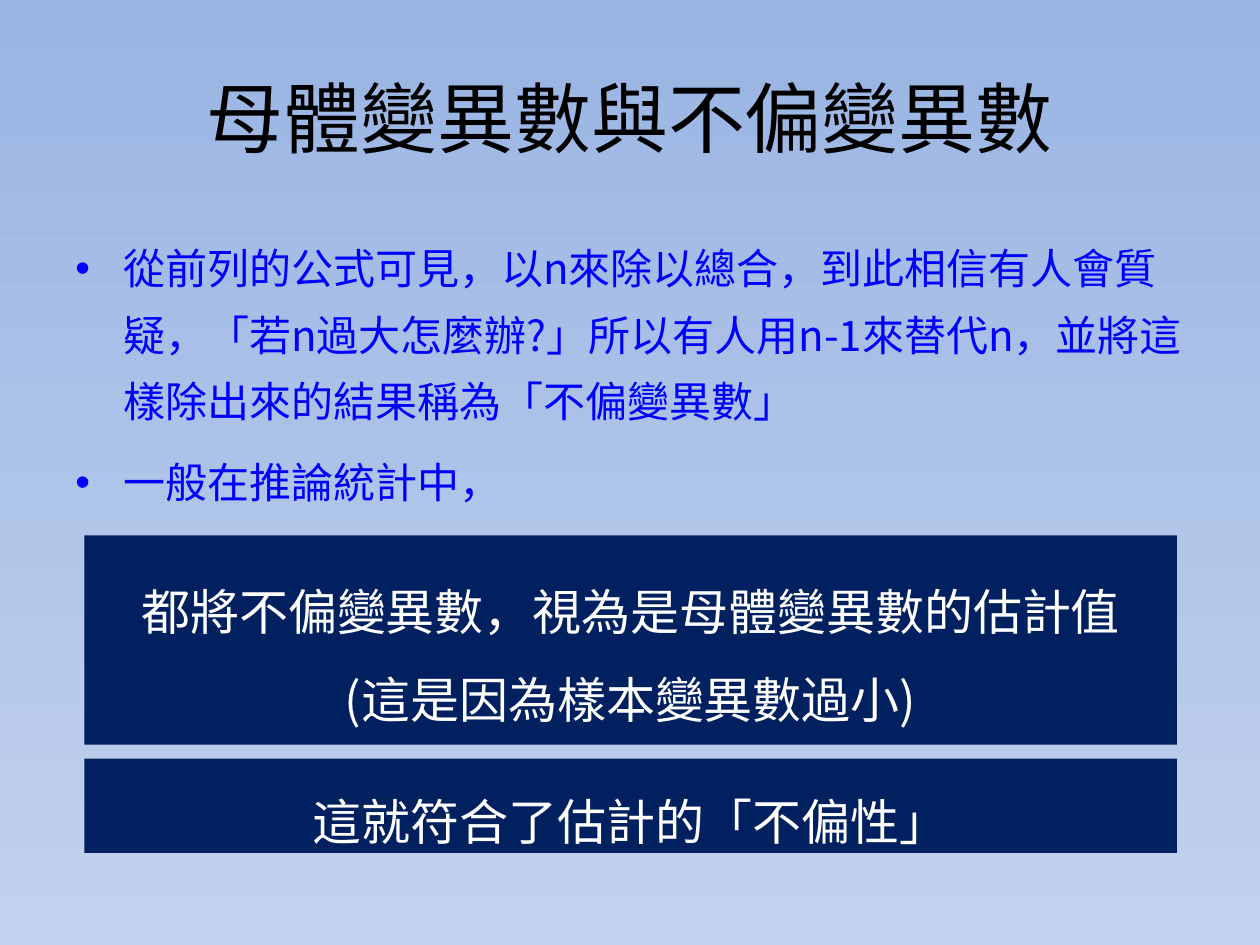
from lxml import etree
from pptx import Presentation
from pptx.dml.color import RGBColor
from pptx.enum import shapes, text
from pptx.oxml import ns
from pptx.util import Inches, Pt

COLORS = {
    "sky_top": "9AB5E4",
    "sky_bottom": "C2D1ED",
    "title": "000000",
    "body": "0000FF",
    "panel": "002060",
    "panel_text": "FFFFFF",
}
CJK = "Noto Sans CJK SC"


def rgb(name):
    return RGBColor.from_string(COLORS[name])


def add_bullet(paragraph, indent):
    props = paragraph._p.get_or_add_pPr()
    props.set("marL", str(indent))
    props.set("indent", str(-indent))
    etree.SubElement(props, ns.qn("a:buFont")).set("typeface", "Arial")
    etree.SubElement(props, ns.qn("a:buChar")).set("char", "•")


def write(frame, lines, size, color, font=CJK, align=text.PP_ALIGN.LEFT,
          anchor=text.MSO_ANCHOR.TOP, spacing=None, gap=None, bullet=None):
    """Fill a text frame with one paragraph per line."""
    frame.word_wrap = True
    frame.vertical_anchor = anchor
    for index, line in enumerate(lines):
        paragraph = frame.add_paragraph() if index else frame.paragraphs[0]
        paragraph.alignment = align
        paragraph.line_spacing = spacing
        if gap and index:
            paragraph.space_before = gap
        if bullet:
            add_bullet(paragraph, bullet)
        run = paragraph.add_run()
        run.text = line
        run.font.size = Pt(size)
        run.font.color.rgb = rgb(color)
        run.font.name = font
        east_asian = etree.SubElement(run._r.get_or_add_rPr(), ns.qn("a:ea"))
        east_asian.set("typeface", CJK)


def paint_background(slide):
    fill = slide.background.fill
    fill.gradient()
    fill.gradient_angle = 270
    for stop, name, position in zip(fill.gradient_stops,
                                    ("sky_top", "sky_bottom"), (0, 1)):
        stop.color.rgb = rgb(name)
        stop.position = position


def add_title(slide, box, line):
    title = slide.shapes.add_textbox(*box)
    write(title.text_frame, [line], 44, "title",
          align=text.PP_ALIGN.CENTER, anchor=text.MSO_ANCHOR.MIDDLE)


def add_body(slide, box, lines):
    body = slide.shapes.add_textbox(*box)
    write(body.text_frame, lines, 24, "body", spacing=Pt(38), gap=Pt(8),
          bullet=Inches(0.38))


def add_panel(slide, box, lines):
    panel = slide.shapes.add_shape(shapes.MSO_SHAPE.RECTANGLE, *box)
    panel.shadow.inherit = False
    panel.fill.solid()
    panel.fill.fore_color.rgb = rgb("panel")
    panel.line.fill.background()
    write(panel.text_frame, lines, 28, "panel_text", font="Calibri",
          align=text.PP_ALIGN.CENTER, anchor=text.MSO_ANCHOR.MIDDLE,
          spacing=1.5)
    return panel


def inches(*lengths):
    return [Inches(length) for length in lengths]


def main():
    deck = Presentation()
    deck.slide_width, deck.slide_height = inches(10, 7.5)
    slide = deck.slides.add_slide(deck.slide_layouts[6])
    paint_background(slide)

    # Heading and argument
    add_title(slide, inches(0.5, 0.3, 9, 1.25), "母體變異數與不偏變異數")
    add_body(slide, inches(0.5, 1.75, 9, 2.88), [
        "從前列的公式可見，以n來除以總合，到此相信有人會質疑，"
        "「若n過大怎麼辦?」所以有人用n-1來替代n，"
        "並將這樣除出來的結果稱為「不偏變異數」",
        "一般在推論統計中，",
    ])

    # Conclusions
    estimate = add_panel(slide, inches(0.67, 4.25, 8.67, 1.66), [
        "都將不偏變異數，視為是母體變異數的估計值",
        "(這是因為樣本變異數過小)",
    ])
    # The parenthetical line uses the CJK font for its brackets
    estimate.text_frame.paragraphs[1].runs[0].font.name = CJK
    add_panel(slide, inches(0.67, 6.02, 8.67, 0.75),
              ["這就符合了估計的「不偏性」"])

    deck.save("out.pptx")


if __name__ == "__main__":
    main()
